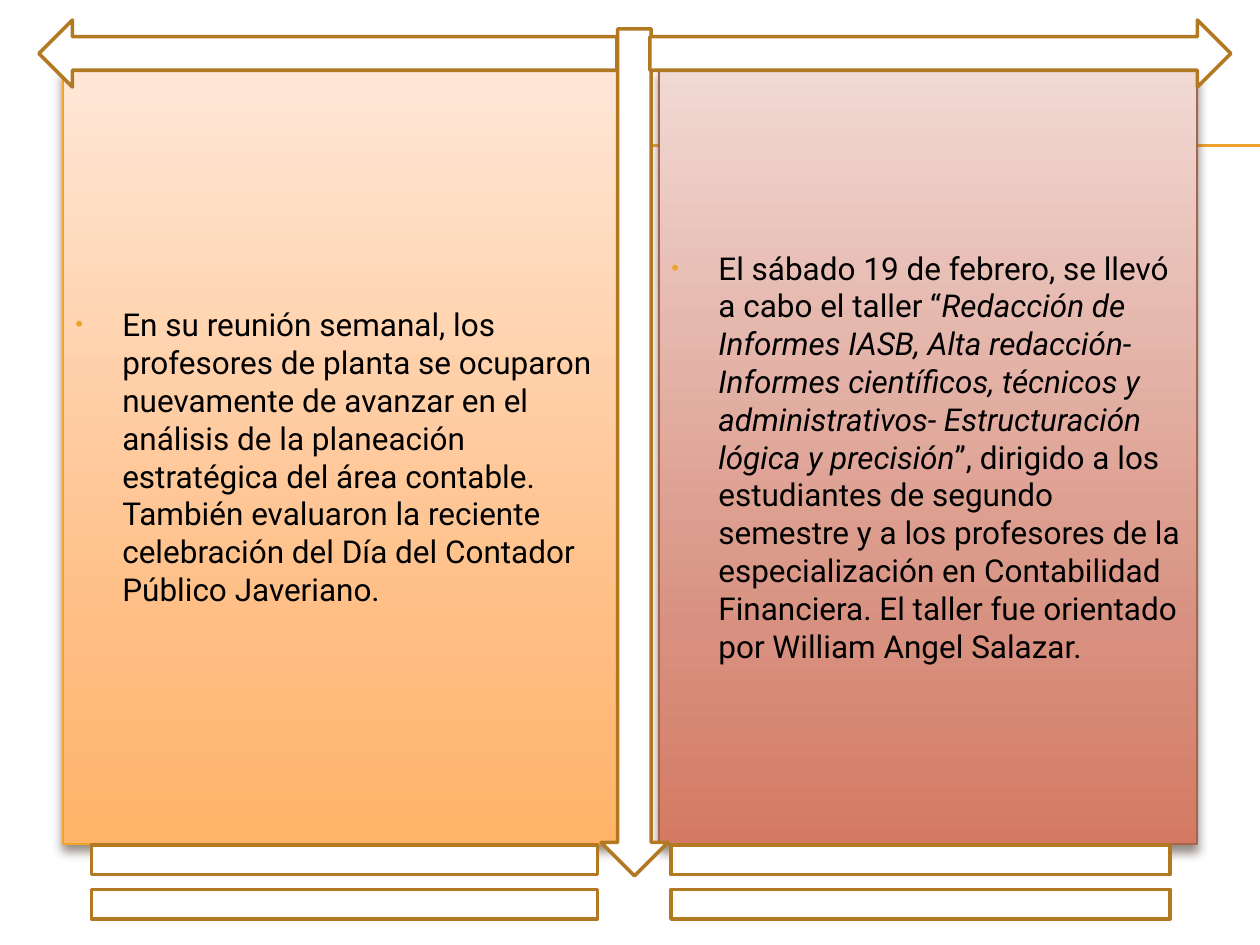
from dataclasses import dataclass

from lxml.etree import SubElement
from pptx import Presentation
from pptx.dml.color import RGBColor
from pptx.enum.shapes import MSO_CONNECTOR, MSO_SHAPE
from pptx.enum.text import MSO_ANCHOR, PP_ALIGN
from pptx.oxml import parse_xml
from pptx.oxml.ns import nsdecls, qn
from pptx.util import Emu, Pt

EMU_PER_PX = 914400 / 126
COLORS = {
    "black": "000000",
    "white": "FFFFFF",
    "gold": "F0A22E",
    "bronze": "B27822",
    "brick": "A5644E",
    "shadow": "4E3B30",
}
ORANGE_STOPS = ((0, "FFE7D7"), (72, "FFBE84"), (100, "FFB468"))
RED_STOPS = ((0, "F1D9D4"), (72, "D89180"), (100, "D47A62"))


@dataclass(frozen=True)
class Box:
    left: int
    top: int
    width: int
    height: int


@dataclass(frozen=True)
class NewsPanel:
    box: Box
    stops: tuple[tuple[int, str], ...]
    border: str
    runs: tuple[tuple[str, bool], ...]  # wording, italic


@dataclass(frozen=True)
class Ornament:
    preset: MSO_SHAPE
    box: Box


PANELS = (
    NewsPanel(Box(63, 69, 557, 775), ORANGE_STOPS, "gold", (
        ("En su reunión semanal, los profesores de planta se ocuparon nuevamente "
         "de avanzar en el análisis de la planeación estratégica del área contable. "
         "También evaluaron la reciente celebración del Día del Contador Público "
         "Javeriano.", False),
    )),
    NewsPanel(Box(659, 69, 538, 775), RED_STOPS, "brick", (
        ("El sábado 19 de febrero, se llevó a cabo el taller “", False),
        ("Redacción de Informes IASB, Alta redacción-Informes científicos, técnicos "
         "y administrativos- Estructuración lógica y precisión", True),
        ("”, dirigido a los estudiantes de segundo semestre y a los profesores de "
         "la especialización en Contabilidad Financiera. El taller fue orientado "
         "por William Angel Salazar.", False),
    )),
)
ORNAMENTS = (
    Ornament(MSO_SHAPE.DOWN_ARROW, Box(601, 29, 67, 847)),
    Ornament(MSO_SHAPE.RIGHT_ARROW, Box(650, 20, 581, 67)),
    Ornament(MSO_SHAPE.LEFT_ARROW, Box(39, 20, 578, 67)),
    Ornament(MSO_SHAPE.MATH_EQUAL, Box(0, 819, 689, 126)),
    Ornament(MSO_SHAPE.MATH_EQUAL, Box(581, 819, 679, 126)),
)


def px(length: int) -> Emu:
    return Emu(round(length * EMU_PER_PX))


def rgb(name: str) -> RGBColor:
    return RGBColor.from_string(COLORS[name])


def add_outlined(slide, preset: MSO_SHAPE, box: Box, border: str, weight: float):
    shape = slide.shapes.add_shape(
        preset, px(box.left), px(box.top), px(box.width), px(box.height))
    shape.shadow.inherit = False
    shape.line.color.rgb = rgb(border)
    shape.line.width = Pt(weight)
    return shape


def add_rule(slide, left: int, right: int, y: int) -> None:
    rule = slide.shapes.add_connector(
        MSO_CONNECTOR.STRAIGHT, px(left), px(y), px(right), px(y))
    rule.line.color.rgb = rgb("gold")
    rule.line.width = Pt(0.75)
    SubElement(rule._element.spPr, qn("a:effectLst"))


def fill_downwards(shape, stops: tuple[tuple[int, str], ...]) -> None:
    """Fill with a top-to-bottom gradient of any number of stops."""
    stop_xml = "".join(
        f'<a:gs pos="{percent * 1000}"><a:srgbClr val="{color}"/></a:gs>'
        for percent, color in stops)
    gradient = parse_xml(
        f'<a:gradFill {nsdecls("a")} rotWithShape="1"><a:gsLst>{stop_xml}</a:gsLst>'
        '<a:lin ang="5400000" scaled="0"/></a:gradFill>')
    shape._element.spPr.find(qn("a:prstGeom")).addnext(gradient)


def cast_shadow(shape) -> None:
    effects = shape._element.spPr.find(qn("a:effectLst"))
    effects.append(parse_xml(
        f'<a:outerShdw {nsdecls("a")} blurRad="{Pt(6)}" dist="{Pt(4)}" '
        f'dir="5400000" rotWithShape="0"><a:srgbClr val="{COLORS["shadow"]}">'
        '<a:alpha val="60000"/></a:srgbClr></a:outerShdw>'))


def add_bullet(paragraph, indent: int) -> None:
    properties = paragraph._p.get_or_add_pPr()
    properties.set("marL", str(px(indent)))
    properties.set("indent", str(-px(indent)))
    bullet_color = SubElement(properties, qn("a:buClr"))
    SubElement(bullet_color, qn("a:srgbClr"), val=COLORS["gold"])
    SubElement(properties, qn("a:buSzPct"), val="70000")
    SubElement(properties, qn("a:buFont"), typeface="Arial")
    SubElement(properties, qn("a:buChar"), char="•")


def write_run(paragraph, text: str, *, size: int = 18, font: str = "Roboto",
              color: str = "black", italic: bool = False) -> None:
    run = paragraph.add_run()
    run.text = text
    run.font.size = Pt(size)
    run.font.name = font
    run.font.italic = italic
    run.font.color.rgb = rgb(color)


def draw_panel(slide, panel: NewsPanel) -> None:
    shape = add_outlined(slide, MSO_SHAPE.RECTANGLE, panel.box, panel.border, 0.79)
    fill_downwards(shape, panel.stops)
    cast_shadow(shape)
    frame = shape.text_frame
    frame.word_wrap = True
    frame.vertical_anchor = MSO_ANCHOR.MIDDLE
    news = frame.paragraphs[0]
    news.alignment = PP_ALIGN.LEFT
    add_bullet(news, indent=47)
    for text, italic in panel.runs:
        write_run(news, text, italic=italic)


def draw_ornament(slide, ornament: Ornament) -> None:
    shape = add_outlined(slide, ornament.preset, ornament.box, "bronze", 2)
    shape.fill.solid()
    shape.fill.fore_color.rgb = rgb("white")


def main() -> None:
    deck = Presentation()
    deck.slide_width, deck.slide_height = px(1260), px(945)
    slide = deck.slides.add_slide(deck.slide_layouts[6])
    for y in (145, 146):
        add_rule(slide, 71, 1260, y)
    for panel in PANELS:
        draw_panel(slide, panel)
    for ornament in ORNAMENTS:
        draw_ornament(slide, ornament)
    deck.save("out.pptx")


if __name__ == "__main__":
    main()
